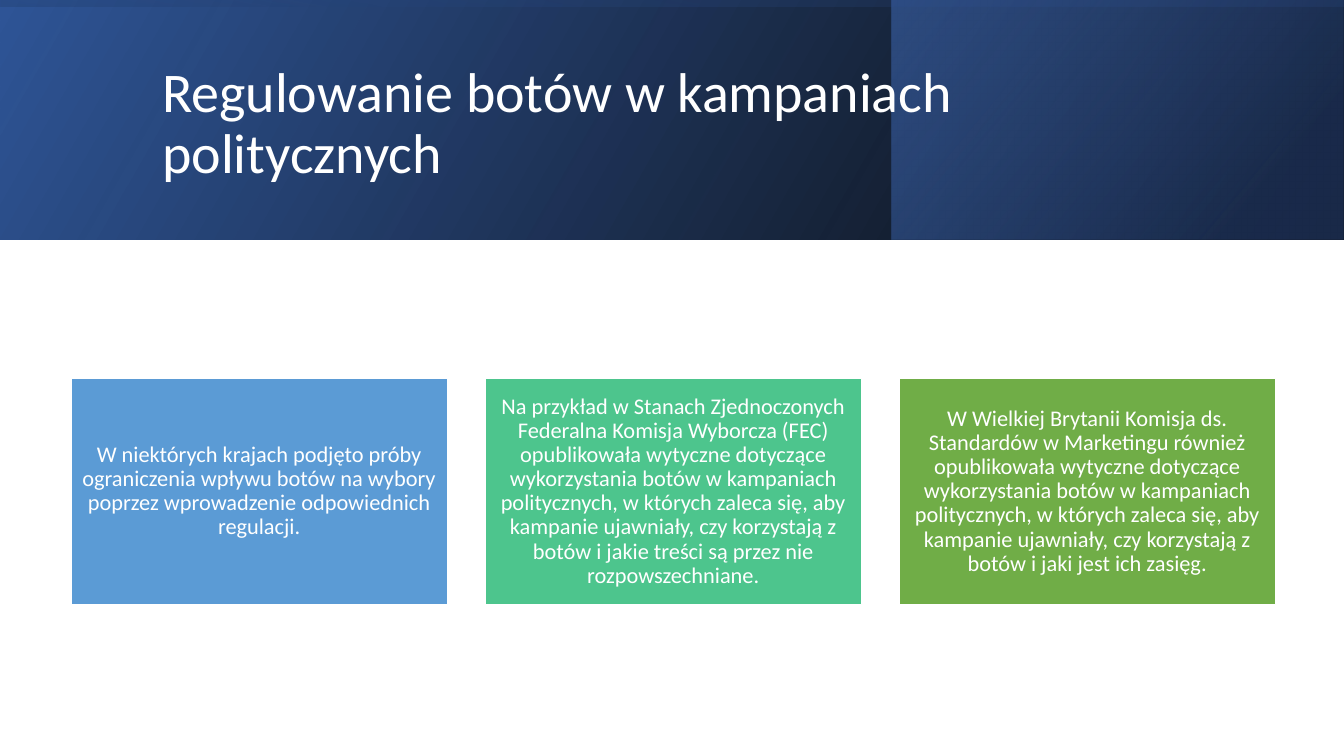
import pptx
import pptx.util
import pptx.dml.color
import pptx.enum.shapes
import pptx.enum.text
import pptx.oxml.ns
import lxml.etree

Pt = pptx.util.Pt
qn = pptx.oxml.ns.qn
RECT = pptx.enum.shapes.MSO_SHAPE.RECTANGLE
ALIGN = pptx.enum.text.PP_ALIGN
MIDDLE = pptx.enum.text.MSO_ANCHOR.MIDDLE
FONT = "Calibri"
WIDE, HIGH = 960, 540

COLORS = {
    "white": "FFFFFF", "black": "000000", "navy": "203864",
    "deep": "2F5597", "royal": "4472C4",
    "blue": "5B9BD5", "mint": "4DC58D", "green": "70AD47",
}

TITLE = "Regulowanie botów w kampaniach politycznych"
CARDS = [
    ("blue", "W niektórych krajach podjęto próby ograniczenia wpływu botów na "
             "wybory poprzez wprowadzenie odpowiednich regulacji."),
    ("mint", "Na przykład w Stanach Zjednoczonych Federalna Komisja Wyborcza (FEC) "
             "opublikowała wytyczne dotyczące wykorzystania botów w kampaniach "
             "politycznych, w których zaleca się, aby kampanie ujawniały, czy "
             "korzystają z botów i jakie treści są przez nie rozpowszechniane."),
    ("green", "W Wielkiej Brytanii Komisja ds. Standardów w Marketingu również "
              "opublikowała wytyczne dotyczące wykorzystania botów w kampaniach "
              "politycznych, w których zaleca się, aby kampanie ujawniały, czy "
              "korzystają z botów i jaki jest ich zasięg."),
]


def color(name):
    return pptx.dml.color.RGBColor.from_string(COLORS[name])


def write(frame, text, size, align):
    frame.text = text
    frame.word_wrap = True
    frame.vertical_anchor = MIDDLE
    para = frame.paragraphs[0]
    para.alignment = align
    para.line_spacing = 0.9
    font = para.runs[0].font
    font.name, font.size = FONT, Pt(size)
    font.color.rgb = color("white")


def block(slide, box):
    shape = slide.shapes.add_shape(RECT, *map(Pt, box))
    shape.shadow.inherit = False
    return shape


def layer(slide, box, angle, stops, turn=0):
    """Mirrored gradient block; stops are (position, colour, opacity) in percent."""
    shape = block(slide, box)
    shape.line.fill.background()
    shape.rotation = turn
    shape.fill.gradient()
    shape.fill.gradient_angle = angle
    for stop, (place, name, _) in zip(shape.fill.gradient_stops, stops):
        stop.position = place / 100
        stop.color.rgb = color(name)
    props = shape.element.spPr
    props.find(qn("a:xfrm")).set("flipH", "1")
    for tint, (_, _, alpha) in zip(props.iter(qn("a:srgbClr")), stops):
        node = lxml.etree.SubElement(tint, qn("a:alpha"))
        node.set("val", str(alpha * 1000))


def header(slide, box):
    left, top, width, height = box
    # Gradient layers
    layer(slide, box, 30, [(0, "black", 96), (100, "deep", 100)])
    side = 322.8
    layer(slide, (left + width - side - 0.6, top, side, height), 40,
          [(19, "navy", 68), (100, "royal", 48)])
    shift = (width - height) / 2
    layer(slide, (left + shift, top - shift, height, width), 10,
          [(23, "deep", 16), (99, "black", 45)], turn=270)
    # Title, in front of the layers
    title = slide.shapes.title
    title.left, title.top = Pt(left + 108.7), Pt(top + 27.4)
    title.width, title.height = Pt(765.4), Pt(123.8)
    write(title.text_frame, TITLE, 40, ALIGN.LEFT)
    title.text_frame.auto_size = pptx.enum.text.MSO_AUTO_SIZE.NONE
    title.element.getparent().append(title.element)


def cards(slide, box, gap):
    left, top, width, height = box
    wide = (width - gap * (len(CARDS) - 1)) / len(CARDS)
    for i, (name, text) in enumerate(CARDS):
        card = block(slide, (left + i * (wide + gap), top, wide, height))
        card.fill.solid()
        card.fill.fore_color.rgb = color(name)
        card.line.color.rgb = color("white")
        card.line.width = Pt(1)
        frame = card.text_frame
        frame.margin_left = frame.margin_right = Pt(5)
        frame.margin_top = frame.margin_bottom = Pt(5)
        write(frame, text, 16, ALIGN.CENTER)


def main():
    deck = pptx.Presentation()
    deck.slide_width, deck.slide_height = Pt(WIDE), Pt(HIGH)
    slide = deck.slides.add_slide(deck.slide_layouts[5])
    header(slide, (0, 0, WIDE, 171))
    cards(slide, (50.8, 270.4, 860.2, 161.3), 27)
    deck.save("out.pptx")


if __name__ == "__main__":
    main()
